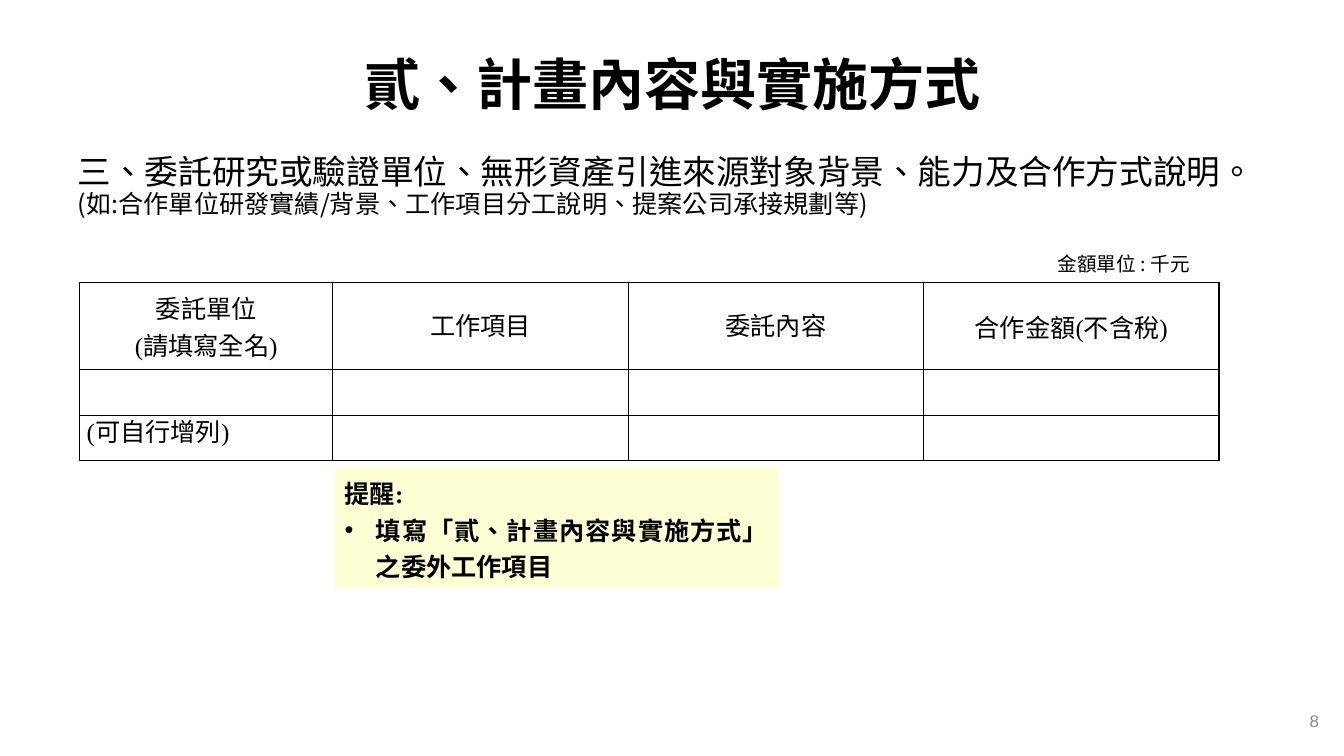
from lxml.etree import SubElement
from pptx import Presentation
from pptx.dml.color import RGBColor
from pptx.enum.lang import MSO_LANGUAGE_ID
from pptx.enum.shapes import MSO_SHAPE
from pptx.enum.text import MSO_ANCHOR, MSO_AUTO_SIZE, PP_ALIGN
from pptx.oxml.ns import qn
from pptx.util import Inches, Pt

# Content
TITLE = "貳、計畫內容與實施方式"
BODY = [
    ("三、委託研究或驗證單位、無形資產引進來源對象背景、能力及合作方式說明。", 24),
    ("(如:合作單位研發實績/背景、工作項目分工說明、提案公司承接規劃等)", 18),
]
UNIT = "金額單位 : 千元"
ROWS = [
    ["委託單位\n(請填寫全名)", "工作項目", "委託內容", "合作金額(不含稅)"],
    ["", "", "", ""],
    ["(可自行增列)", "", "", ""],
]
FIXED = {"工作項目", "委託內容", "(可自行增列)"}
NOTE = ["提醒:", "填寫「貳、計畫內容與實施方式」之委外工作項目"]
PAGE = "8"

# Format
COLORS = {"ink": "000000", "note": "FFFFCC", "page": "898989"}
SERIF, SANS, PLAIN = "Times New Roman", "Noto Sans CJK SC", "Arial"
WIDTHS = [2.51, 2.93, 2.93, 2.93]
HEIGHTS = [0.87, 0.45, 0.45]


def box(left, top, width, height):
    return [Inches(n) for n in (left, top, width, height)]


def place(shape, *spot):
    shape.left, shape.top, shape.width, shape.height = box(*spot)


def write(para, text, size=18, font=SERIF, color="ink", bold=False,
          align=PP_ALIGN.LEFT, space=None):
    para.alignment = align
    para.space_before = Pt(0)
    if space:
        para.line_spacing = space
    run = para.add_run()
    run.text = text
    face = run.font
    face.size, face.bold, face.name = Pt(size), bold, font
    face.color.rgb = RGBColor.from_string(COLORS[color])
    face.language_id = MSO_LANGUAGE_ID.TRADITIONAL_CHINESE
    SubElement(face._element, qn("a:ea"), typeface=SANS)


def lines(frame, count):
    while len(frame.paragraphs) < count:
        frame.add_paragraph()
    return frame.paragraphs


def indent(para, size, mark=None):
    props = para._p.get_or_add_pPr()
    props.set("marL", str(Inches(size)))
    props.set("indent", str(-Inches(size)))
    if mark:
        SubElement(props, qn("a:buFont"), typeface=PLAIN)
        SubElement(props, qn("a:buChar"), char=mark)
    else:
        SubElement(props, qn("a:buNone"))


def border(cell):
    props = cell._tc.get_or_add_tcPr()
    for at, side in enumerate(("lnL", "lnR", "lnT", "lnB")):
        line = SubElement(props, qn("a:" + side), w=str(Pt(1)))
        fill = SubElement(line, qn("a:solidFill"))
        SubElement(fill, qn("a:srgbClr"), val=COLORS["ink"])
        props.insert(at, line)


deck = Presentation()
deck.slide_width, deck.slide_height = Inches(13.33), Inches(7.5)
slide = deck.slides.add_slide(deck.slide_layouts[1])
shapes = slide.shapes

# Title
title = shapes.title
place(title, 0.67, 0.3, 12, 1.05)
title.text_frame.auto_size = MSO_AUTO_SIZE.NONE
title.text_frame.vertical_anchor = MSO_ANCHOR.MIDDLE
write(title.text_frame.paragraphs[0], TITLE, size=40, bold=True,
      align=PP_ALIGN.CENTER)

# Body
body = slide.placeholders[1]
place(body, 0.67, 1.49, 12, 5.21)
body.text_frame.auto_size = MSO_AUTO_SIZE.NONE
for para, (text, size) in zip(lines(body.text_frame, len(BODY)), BODY):
    write(para, text, size=size, font=SANS, space=0.9)
    indent(para, 0)

# Page number
page = shapes.add_textbox(*box(10.07, 6.95, 3.11, 0.4)).text_frame
page.word_wrap = True
page.vertical_anchor = MSO_ANCHOR.MIDDLE
write(page.paragraphs[0], PAGE, size=12, font=PLAIN, color="page",
      align=PP_ALIGN.RIGHT)

# Table
table = shapes.add_table(len(ROWS), len(WIDTHS), *box(
    0.79, 2.8, sum(WIDTHS), sum(HEIGHTS))).table
table.first_row = table.horz_banding = False
for col, width in zip(table.columns, WIDTHS):
    col.width = Inches(width)
for r, row in enumerate(ROWS):
    table.rows[r].height = Inches(HEIGHTS[r])
    for c, text in enumerate(row):
        cell = table.cell(r, c)
        cell.fill.background()
        border(cell)
        cell.margin_left = cell.margin_right = Inches(0.07)
        cell.margin_top = cell.margin_bottom = 0
        if r == 0:
            cell.vertical_anchor = MSO_ANCHOR.MIDDLE
        parts = text.split("\n") if text else []
        for para, part in zip(lines(cell.text_frame, len(parts)), parts):
            write(para, part,
                  align=PP_ALIGN.LEFT if r else PP_ALIGN.CENTER,
                  space=Pt(24) if part in FIXED else None)

# Reminder
note = shapes.add_shape(MSO_SHAPE.RECTANGLE, *box(3.32, 4.64, 4.4, 1.19))
note.shadow.inherit = False
note.line.fill.background()
note.fill.solid()
note.fill.fore_color.rgb = RGBColor.from_string(COLORS["note"])
tint = note._element.spPr.find(qn("a:solidFill"))[0]
SubElement(tint, qn("a:alpha"), val="80000")
frame = note.text_frame
frame.word_wrap = True
frame.auto_size = MSO_AUTO_SIZE.SHAPE_TO_FIT_TEXT
frame.vertical_anchor = MSO_ANCHOR.TOP
head, item = lines(frame, len(NOTE))
write(head, NOTE[0], bold=True, space=1.2)
write(item, NOTE[1], bold=True, align=PP_ALIGN.JUSTIFY, space=1.2)
indent(item, 0.31, "•")

# Unit label
unit = shapes.add_textbox(*box(10.39, 2.45, 1.67, 0.34)).text_frame
unit.word_wrap = False
unit.auto_size = MSO_AUTO_SIZE.SHAPE_TO_FIT_TEXT
write(unit.paragraphs[0], UNIT, size=14, font=SANS)

deck.save("out.pptx")
